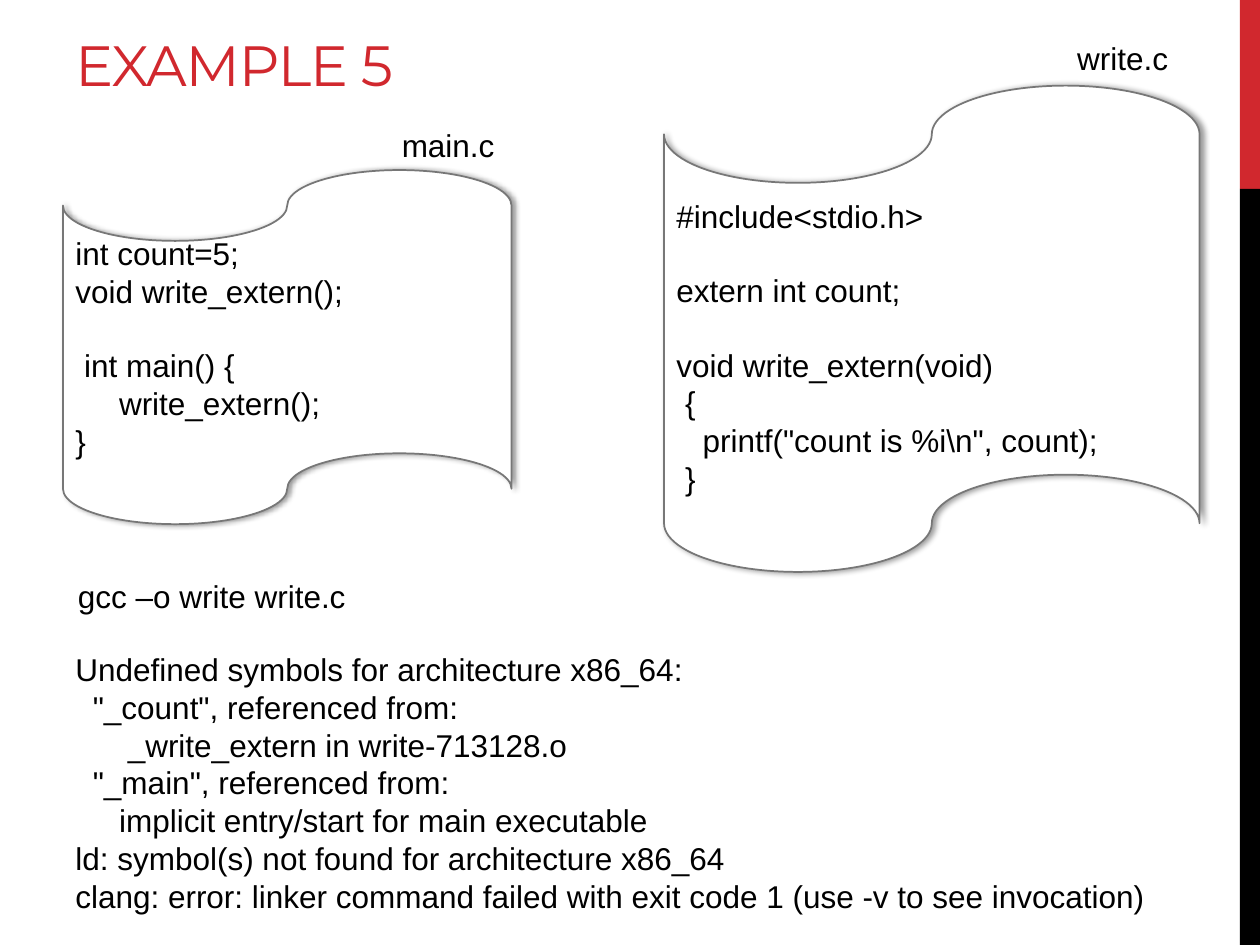
from dataclasses import dataclass

from pptx import Presentation
from pptx.dml.color import RGBColor
from pptx.enum.shapes import MSO_SHAPE
from pptx.enum.text import MSO_ANCHOR, MSO_AUTO_SIZE, PP_ALIGN
from pptx.oxml import parse_xml
from pptx.util import Inches, Pt

RECTANGLE = MSO_SHAPE.RECTANGLE
TAPE = MSO_SHAPE.FLOWCHART_PUNCHED_TAPE
LEFT = PP_ALIGN.LEFT
TOP, MIDDLE, BOTTOM = MSO_ANCHOR.TOP, MSO_ANCHOR.MIDDLE, MSO_ANCHOR.BOTTOM
FIT_TEXT = MSO_AUTO_SIZE.SHAPE_TO_FIT_TEXT

SHADOW = (
    '<a:effectLst xmlns:a="http://schemas.openxmlformats.org/drawingml/2006/main">'
    '<a:outerShdw blurRad="39370" dist="22860" dir="0" rotWithShape="0">'
    '<a:srgbClr val="000000"><a:alpha val="40000"/></a:srgbClr>'
    '</a:outerShdw></a:effectLst>'
)


@dataclass(frozen=True)
class Theme:
    accent: str = "D1282E"
    ink: str = "000000"
    paper: str = "FFFFFF"
    outline: str = "777777"
    title_font: str = "Montserrat"
    body_font: str = "Arial"
    title_size: float = 32.4
    body_size: float = 18
    line_height: float = 20.7


class SlideBuilder:
    """Draws the elements of one slide in a shared theme."""

    def __init__(self, slide, theme):
        self.slide = slide
        self.theme = theme

    def add_lines(self, frame, lines, font, size, color):
        skipped = 0
        started = False
        for line in lines:
            if not line:
                skipped += 1
                continue
            paragraph = frame.add_paragraph() if started else frame.paragraphs[0]
            started = True
            paragraph.alignment = LEFT
            if skipped:
                paragraph.space_before = Pt(skipped * self.theme.line_height)
                skipped = 0
            run = paragraph.add_run()
            run.text = line
            run.font.name = font
            run.font.size = Pt(size)
            run.font.color.rgb = RGBColor.from_string(color)

    def body(self, frame, lines):
        self.add_lines(frame, lines, self.theme.body_font, self.theme.body_size, self.theme.ink)

    def title(self, text, *box):
        frame = self.slide.shapes.add_textbox(*map(Inches, box)).text_frame
        frame.word_wrap = True
        frame.vertical_anchor = BOTTOM
        self.add_lines(frame, [text], self.theme.title_font, self.theme.title_size, self.theme.accent)
        frame.paragraphs[0].runs[0]._r.get_or_add_rPr().set("spc", "-60")

    def text(self, lines, *box):
        frame = self.slide.shapes.add_textbox(*map(Inches, box)).text_frame
        frame.word_wrap = False
        frame.auto_size = FIT_TEXT
        frame.vertical_anchor = TOP
        self.body(frame, lines)

    def bar(self, color, *box):
        bar = self.slide.shapes.add_shape(RECTANGLE, *map(Inches, box))
        bar.shadow.inherit = False
        bar.fill.solid()
        bar.fill.fore_color.rgb = RGBColor.from_string(color)
        bar.line.fill.background()

    def code_tape(self, lines, *box, top_inset=0.05):
        tape = self.slide.shapes.add_shape(TAPE, *map(Inches, box))
        tape.fill.solid()
        tape.fill.fore_color.rgb = RGBColor.from_string(self.theme.paper)
        tape.line.color.rgb = RGBColor.from_string(self.theme.outline)
        tape.line.width = Pt(1)
        tape._element.spPr.append(parse_xml(SHADOW))
        frame = tape.text_frame
        frame.word_wrap = True
        frame.vertical_anchor = MIDDLE
        frame.margin_top = Inches(top_inset)
        self.body(frame, lines)


MAIN_CODE = [
    "int count=5;",
    "void write_extern();",
    "",
    " int main() {",
    "     write_extern();",
    "}",
]
WRITE_CODE = [
    "#include<stdio.h>",
    "",
    "extern int count;",
    "",
    "void write_extern(void)",
    " {",
    '   printf("count is %i\\n", count);',
    " }",
]
LINKER_OUTPUT = [
    "Undefined symbols for architecture x86_64:",
    '  "_count", referenced from:',
    "      _write_extern in write-713128.o",
    '  "_main", referenced from:',
    "     implicit entry/start for main executable",
    "ld: symbol(s) not found for architecture x86_64",
    "clang: error: linker command failed with exit code 1 (use -v to see invocation)",
]


def main():
    deck = Presentation()
    deck.slide_width, deck.slide_height = Inches(10), Inches(7.5)
    theme = Theme()
    builder = SlideBuilder(deck.slides.add_slide(deck.slide_layouts[6]), theme)

    builder.bar(theme.accent, 9.84, 0, 0.16, 1.5)
    builder.bar(theme.ink, 9.84, 1.5, 0.16, 6)
    builder.title("EXAMPLE 5", 0.5, 0.17, 9.02, 0.66)
    builder.code_tape(MAIN_CODE, 0.5, 1.35, 3.56, 2.81)
    builder.text(["main.c"], 3.09, 0.95, 0.95, 0.4)
    builder.code_tape(WRITE_CODE, 5.27, 0.68, 4.25, 3.86, top_inset=0.34)
    builder.text(["write.c"], 8.45, 0.26, 0.95, 0.4)
    builder.text(["gcc –o write write.c"], 0.52, 4.53, 2.35, 0.4)
    builder.text(LINKER_OUTPUT, 0.5, 5.11, 8.77, 2.22)

    deck.save("out.pptx")


if __name__ == "__main__":
    main()
